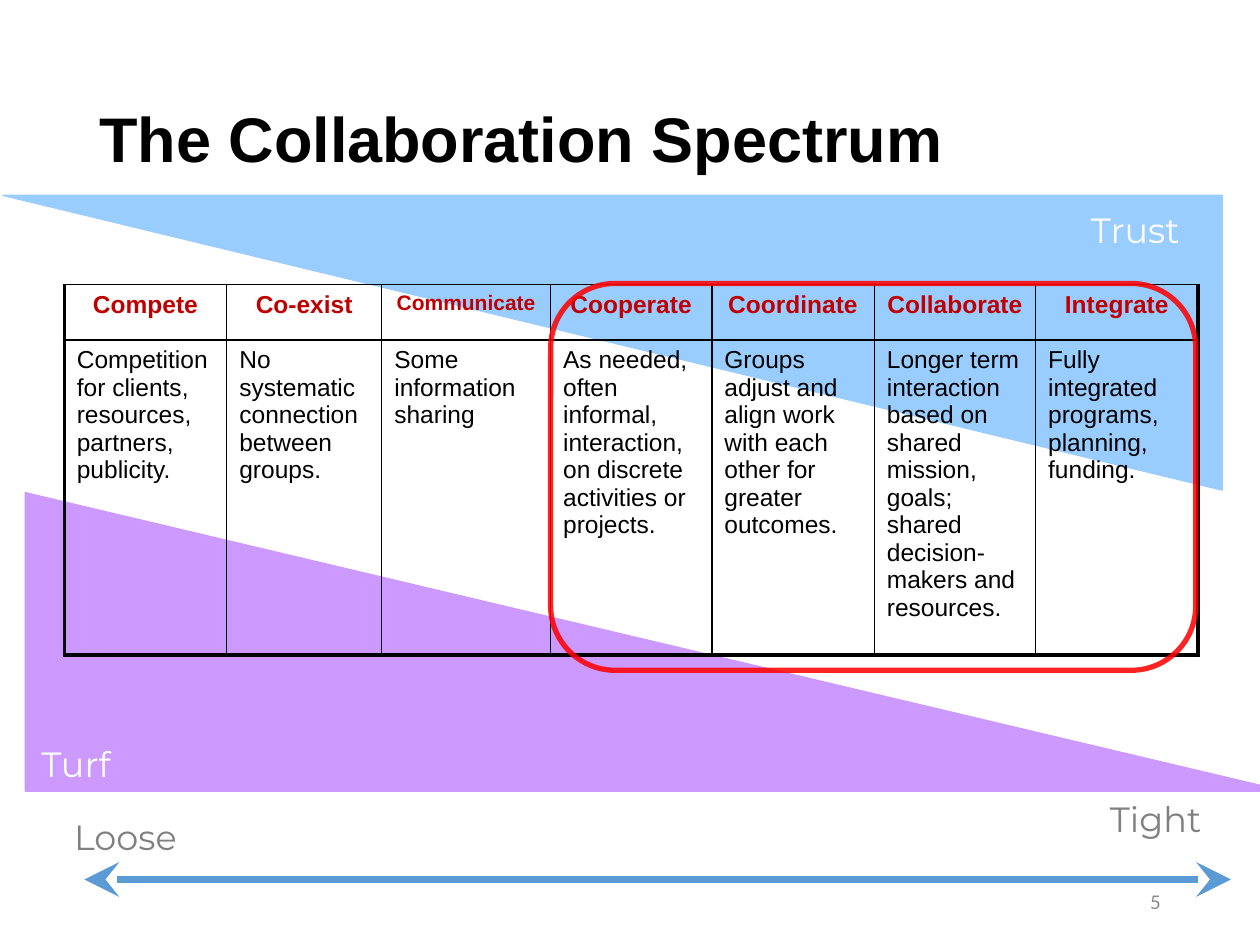
from lxml.etree import SubElement
from pptx import Presentation
from pptx.dml.color import RGBColor
from pptx.enum.shapes import MSO_CONNECTOR, MSO_SHAPE
from pptx.enum.text import MSO_ANCHOR as Anchor, PP_ALIGN as Align
from pptx.oxml.ns import qn
from pptx.util import Inches, Pt

COLORS = {
    "trust": "99CCFF",
    "turf": "CC99FF",
    "white": "FFFFFF",
    "black": "000000",
    "label": "808080",
    "number": "8C8C8C",
    "heading": "C00000",
    "arrow": "5B9BD5",
    "highlight": "FF0000",
}

STAGES = [
    ("Compete", 1.29, "Competition for clients, resources, partners, publicity."),
    ("Co-exist", 1.23, "No systematic connection between groups."),
    ("Communicate", 1.34, "Some information sharing"),
    ("Cooperate", 1.28, "As needed, often informal, interaction, on discrete activities or projects."),
    ("Coordinate", 1.29, "Groups adjust and align work with each other for greater outcomes."),
    ("Collaborate", 1.28, "Longer term interaction based on shared mission, goals; "
                          "shared decision-makers and resources."),
    ("Integrate", 1.29, "Fully integrated programs, planning, funding."),
]
ROW_HEIGHTS = [0.44, 2.5]


def rgb(name):
    return RGBColor.from_string(COLORS[name])


def box(left, top, width, height):
    return Inches(left), Inches(top), Inches(width), Inches(height)


def add_run(paragraph, text, font, size, color, bold=False):
    run = paragraph.add_run()
    run.text = text
    run.font.name = font
    run.font.size = Pt(size)
    run.font.bold = bold
    run.font.color.rgb = rgb(color)


def add_text(slide, place, text, font, size, color, bold=False,
             align=Align.LEFT, wrap=True, fill=None):
    shape = slide.shapes.add_textbox(*box(*place))
    if fill:
        shape.fill.solid()
        shape.fill.fore_color.rgb = rgb(fill)
    frame = shape.text_frame
    frame.word_wrap = wrap
    frame.vertical_anchor = Anchor.MIDDLE
    paragraph = frame.paragraphs[0]
    paragraph.alignment = align
    add_run(paragraph, text, font, size, color, bold)
    return paragraph


def add_wedge(slide, place, color, rotation=0):
    shape = slide.shapes.add_shape(MSO_SHAPE.RIGHT_TRIANGLE, *box(*place))
    shape.shadow.inherit = False
    shape.rotation = rotation
    shape.fill.solid()
    shape.fill.fore_color.rgb = rgb(color)
    shape.line.color.rgb = rgb(color)
    shape.line.width = Pt(0.75)


def set_borders(cell, widths):
    properties = cell._tc.get_or_add_tcPr()
    for side in ("L", "R", "T", "B"):
        line = SubElement(properties, qn(f"a:ln{side}"), w=str(Pt(widths.get(side, 1))))
        fill = SubElement(line, qn("a:solidFill"))
        SubElement(fill, qn("a:srgbClr"), val=COLORS["black"])


def fill_cell(cell, text, size, color, bold, align, widths):
    set_borders(cell, widths)
    cell.fill.background()
    paragraph = cell.text_frame.paragraphs[0]
    paragraph.alignment = align
    add_run(paragraph, text, "Arial", size, color, bold)


def add_stage_table(slide):
    total_width = sum(width for _, width, _ in STAGES)
    place = box(0.51, 2.26, total_width, sum(ROW_HEIGHTS))
    table = slide.shapes.add_table(len(ROW_HEIGHTS), len(STAGES), *place).table
    table.first_row = False
    table.horz_banding = False
    for row, height in zip(table.rows, ROW_HEIGHTS):
        row.height = Inches(height)
    for index, (name, width, description) in enumerate(STAGES):
        table.columns[index].width = Inches(width)
        outer = {}
        if index == 0:
            outer["L"] = 2.25
        if index == len(STAGES) - 1:
            outer["R"] = 2.25
        size = 12 if name == "Communicate" else 14
        fill_cell(table.cell(0, index), name, size, "heading", True, Align.CENTER, outer)
        fill_cell(table.cell(1, index), description, 14, "black", False, Align.LEFT,
                  {**outer, "B": 2.25})


def add_double_arrow(slide, left, right, y):
    arrow = slide.shapes.add_connector(
        MSO_CONNECTOR.STRAIGHT, Inches(left), Inches(y), Inches(right), Inches(y))
    arrow.line.color.rgb = rgb("arrow")
    arrow.line.width = Pt(4)
    line = arrow.line._get_or_add_ln()
    for end in ("a:headEnd", "a:tailEnd"):
        SubElement(line, qn(end), type="stealth", w="lg", len="lg")
    SubElement(arrow._element.spPr, qn("a:effectLst"))


def add_highlight(slide, place):
    shape = slide.shapes.add_shape(MSO_SHAPE.ROUNDED_RECTANGLE, *box(*place))
    shape.shadow.inherit = False
    shape.fill.background()
    shape.line.color.rgb = rgb("highlight")
    shape.line.width = Pt(3)
    color = shape.line._get_or_add_ln().find(".//" + qn("a:srgbClr"))
    SubElement(color, qn("a:alpha"), val="85000")


def main():
    presentation = Presentation()
    presentation.slide_width = Inches(10)
    presentation.slide_height = Inches(7.5)
    slide = presentation.slides.add_slide(presentation.slide_layouts[6])

    add_wedge(slide, (0.02, 1.55, 9.68, 2.34), "trust", 180)
    add_wedge(slide, (0.2, 3.91, 10, 2.37), "turf")
    for text, place, color, fill in [
        ("Trust", (8.56, 1.69, 1, 0.26), "white", None),
        ("Turf", (0.23, 5.93, 1, 0.26), "white", None),
        ("Loose", (0.49, 6.45, 1.16, 0.37), "label", "white"),
        ("Tight", (8.71, 6.31, 1.16, 0.37), "label", "white"),
    ]:
        add_text(slide, place, text, "Montserrat", 20, color, wrap=False, fill=fill)

    add_stage_table(slide)
    title = add_text(slide, (0.69, 0.4, 8.62, 1.45), "The Collaboration Spectrum",
                     "Arial", 36, "black", bold=True)
    title.line_spacing = 0.9
    add_text(slide, (7.06, 6.95, 2.25, 0.4), "5", "Calibri", 12, "number", align=Align.RIGHT)
    add_double_arrow(slide, 0.67, 9.77, 6.98)
    add_highlight(slide, (4.37, 2.25, 5.12, 3.07))
    presentation.save("out.pptx")


if __name__ == "__main__":
    main()
